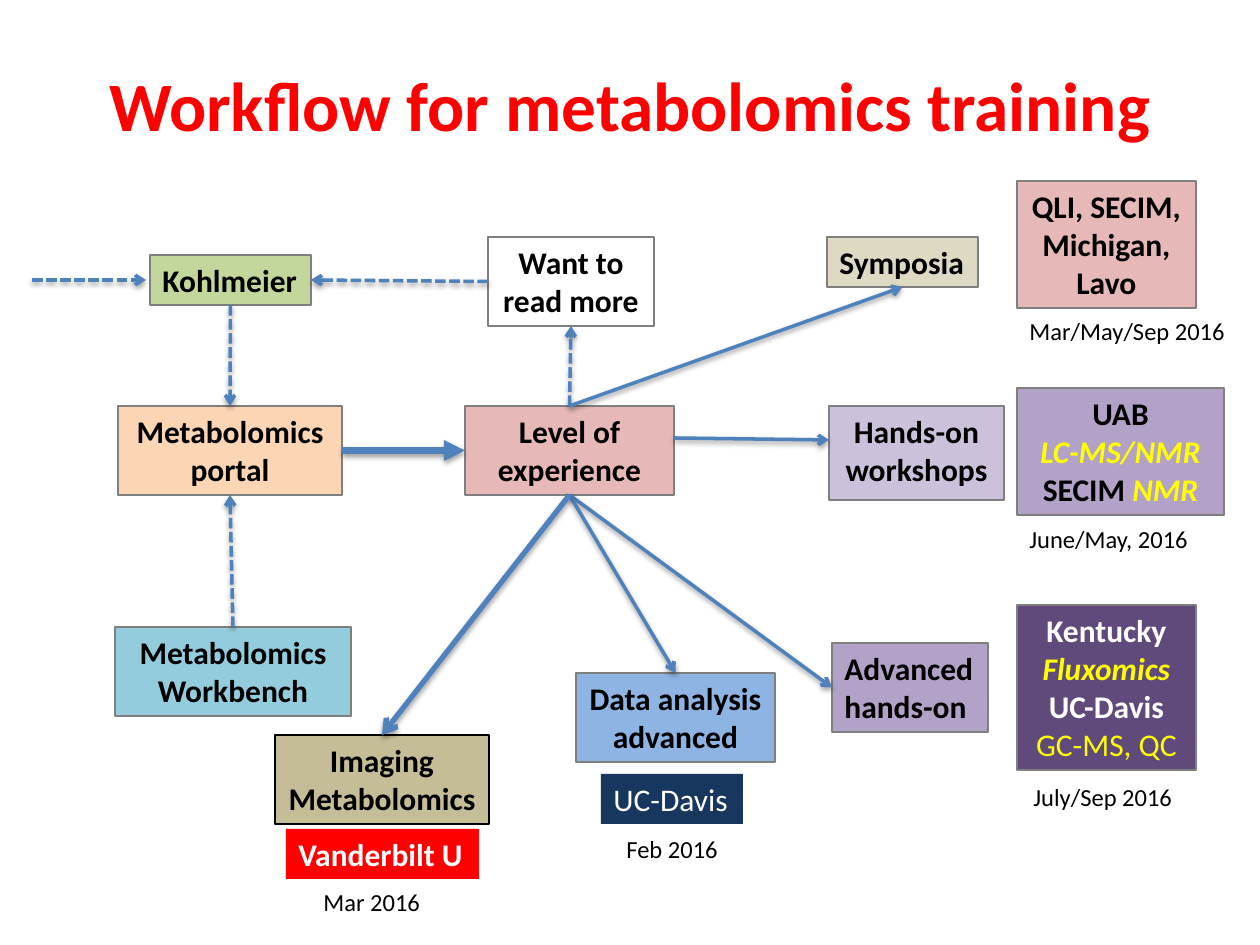
from lxml.etree import SubElement
from pptx import Presentation
from pptx.dml.color import RGBColor
from pptx.enum.dml import MSO_LINE
from pptx.enum.shapes import MSO_CONNECTOR, MSO_SHAPE
from pptx.enum.text import MSO_ANCHOR, MSO_AUTO_SIZE, PP_ALIGN
from pptx.oxml import parse_xml
from pptx.oxml.ns import nsdecls, qn
from pptx.util import Emu, Pt

THEME = {
    "font": "Calibri",
    "title": 39.6, "body": 18, "date": 14,
    "red": "FF0000", "black": "000000", "white": "FFFFFF", "yellow": "FFFF00",
    "gray": "7F7F7F", "arrow": "4F81BD", "green": "C3D69B", "peach": "FCD5B5",
    "aqua": "93CDDD", "rose": "E6B9B8", "sand": "DDD9C3", "khaki": "C4BD97",
    "lilac": "CCC1DA", "purple": "B3A2C7", "plum": "604A7B",
    "sky": "8EB4E3", "navy": "17375E",
}

# Run styles: colour, bold, italic
STYLES = {
    "dark": ("black", True, False),
    "light": ("white", True, False),
    "plain": ("white", False, False),
    "method": ("yellow", True, True),
    "note": ("yellow", False, False),
}

TITLE = "Workflow for metabolomics training"

# Name: place in px, fill, outline, layout, paragraphs of (text, style) runs
BOXES = {
    "read": ((488, 237, 166, 89), None, "gray", "center wrap",
             [[("Want to read more", "dark")]]),
    "hands": ((829, 406, 175, 94), "lilac", "gray", "center wrap",
              [[("Hands-on workshops", "dark")]]),
    "expert": ((832, 643, 156, 89), "purple", "gray", "left wrap",
               [[("Advanced hands-on", "dark")]]),
    "data": ((576, 673, 199, 89), "sky", "gray", "center",
             [[("Data analysis", "dark")], [("advanced", "dark")]]),
    "level": ((465, 406, 209, 89), "rose", "gray", "center wrap",
              [[("Level of experience", "dark")]]),
    "bench": ((115, 627, 236, 89), "aqua", "gray", "center wrap",
              [[("Metabolomics Workbench", "dark")]]),
    "portal": ((118, 406, 224, 89), "peach", "gray", "center wrap",
               [[("Metabolomics portal", "dark")]]),
    "author": ((150, 255, 161, 50), "green", "gray", "left",
               [[("Kohlmeier", "dark")]]),
    "symposia": ((827, 237, 151, 50), "sand", "gray", "left",
                 [[("Symposia", "dark")]]),
    "imaging": ((275, 735, 214, 89), "khaki", "black", "center",
                [[("Imaging", "dark")], [("Metabolomics", "dark")]]),
    "talk hosts": ((1017, 181, 179, 127), "rose", "gray", "center wrap",
                   [[("QLI, SECIM, Michigan, Lavo", "dark")]]),
    "hands hosts": ((1017, 388, 207, 127), "purple", "gray", "center wrap",
                    [[("UAB ", "dark"), ("LC-MS/NMR", "method")],
                     [("SECIM ", "dark"), ("NMR", "method")]]),
    "expert hosts": ((1017, 605, 179, 165), "plum", "gray", "center wrap",
                     [[("Kentucky", "light")], [("Fluxomics", "method")],
                      [("UC-Davis ", "light"), ("GC-MS, QC", "note")]]),
    "data host": ((601, 774, 142, 50), "navy", None, "left",
                  [[("UC-Davis", "plain")]]),
    "imaging host": ((286, 829, 193, 50), "red", None, "left",
                     [[("Vanderbilt U", "light")]]),
}

DATES = [
    ("Mar/May/Sep 2016", (1017, 310, 223, 43)),
    ("June/May, 2016", (1017, 518, 188, 43)),
    ("July/Sep 2016", (1021, 776, 165, 43)),
    ("Feb 2016", (614, 828, 118, 43)),
    ("Mar 2016", (311, 881, 122, 43)),
]

# An end is (box, side) or a free point in px
SIDES = {"top": 0, "left": 1, "bottom": 2, "right": 3}
ARROWS = [  # start, end, width, dashed, head
    (("level", "top"), ("read", "bottom"), 2, True, "arrow"),
    ((674, 438), (829, 440), 2, False, "arrow"),
    (("level", "bottom"), ("expert", "left"), 2, False, "arrow"),
    (("level", "bottom"), ("data", "top"), 2, False, "arrow"),
    (("portal", "right"), ("level", "left"), 4, False, "triangle"),
    (("read", "left"), ("author", "right"), 2, True, "arrow"),
    (("bench", "top"), ("portal", "bottom"), 2, True, "arrow"),
    (("author", "bottom"), ("portal", "top"), 2, True, "arrow"),
    ((32, 280), (146, 280), 2, True, "arrow"),
    (("level", "top"), ("symposia", "bottom"), 2, False, "arrow"),
    (("level", "bottom"), ("imaging", "top"), 3, False, "arrow"),
]

SHADOW = (f'<a:effectLst {nsdecls("a")}><a:outerShdw blurRad="40000" dist="20000" '
          'dir="5400000" rotWithShape="0"><a:srgbClr val="000000">'
          '<a:alpha val="38000"/></a:srgbClr></a:outerShdw></a:effectLst>')


def px(n):
    return Emu(round(n * 914400 / 126))


def color(name):
    return RGBColor.from_string(THEME[name])


def style(font, size, name, bold=False):
    font.name, font.size, font.bold = THEME["font"], Pt(THEME[size]), bold
    font.color.rgb = color(name)


def add_box(slide, place, fill, edge, layout, paras):
    box = slide.shapes.add_shape(MSO_SHAPE.RECTANGLE, *map(px, place))
    box.shadow.inherit = False
    if fill:
        box.fill.solid()
        box.fill.fore_color.rgb = color(fill)
    else:
        box.fill.background()
    if edge:
        box.line.color.rgb = color(edge)
        box.line.width = Pt(0.75)
    else:
        box.line.fill.background()
    frame = box.text_frame
    frame.word_wrap = "wrap" in layout
    frame.auto_size = MSO_AUTO_SIZE.SHAPE_TO_FIT_TEXT
    frame.vertical_anchor = MSO_ANCHOR.TOP
    for i, runs in enumerate(paras):
        para = frame.add_paragraph() if i else frame.paragraphs[0]
        para.alignment = PP_ALIGN.CENTER if "center" in layout else PP_ALIGN.LEFT
        for text, kind in runs:
            run = para.add_run()
            run.text = text
            name, bold, slant = STYLES[kind]
            style(run.font, "body", name, bold)
            run.font.italic = slant
    return box


def add_date(slide, text, place):
    frame = slide.shapes.add_textbox(*map(px, place)).text_frame
    frame.word_wrap = False
    frame.auto_size = MSO_AUTO_SIZE.SHAPE_TO_FIT_TEXT
    frame.text = text
    style(frame.paragraphs[0].font, "date", "black")


def add_arrow(slide, boxes, start, end, width, dashed, head):
    free = [(0, 0) if p[0] in boxes else p for p in (start, end)]
    line = slide.shapes.add_connector(
        MSO_CONNECTOR.STRAIGHT, *(px(n) for point in free for n in point))
    for point, join in ((start, line.begin_connect), (end, line.end_connect)):
        if point[0] in boxes:
            join(boxes[point[0]], SIDES[point[1]])
    line.line.color.rgb = color("arrow")
    line.line.width = Pt(width)
    if dashed:
        line.line.dash_style = MSO_LINE.SQUARE_DOT
    SubElement(line.line._get_or_add_ln(), qn("a:tailEnd"), type=head)
    line._element.spPr.append(parse_xml(SHADOW))


def main():
    deck = Presentation()
    deck.slide_width, deck.slide_height = px(1260), px(945)
    slide = deck.slides.add_slide(deck.slide_layouts[5])

    # Title
    title = slide.shapes.title
    title.left, title.top, title.width, title.height = map(px, (63, 25, 1134, 158))
    title.text_frame.text = TITLE
    title.text_frame.vertical_anchor = MSO_ANCHOR.MIDDLE
    para = title.text_frame.paragraphs[0]
    para.alignment = PP_ALIGN.CENTER
    style(para.font, "title", "red", True)

    # Steps, hosts, dates and arrows
    boxes = {name: add_box(slide, *row) for name, row in BOXES.items()}
    for date in DATES:
        add_date(slide, *date)
    for arrow in ARROWS:
        add_arrow(slide, boxes, *arrow)

    deck.save("out.pptx")


if __name__ == "__main__":
    main()
